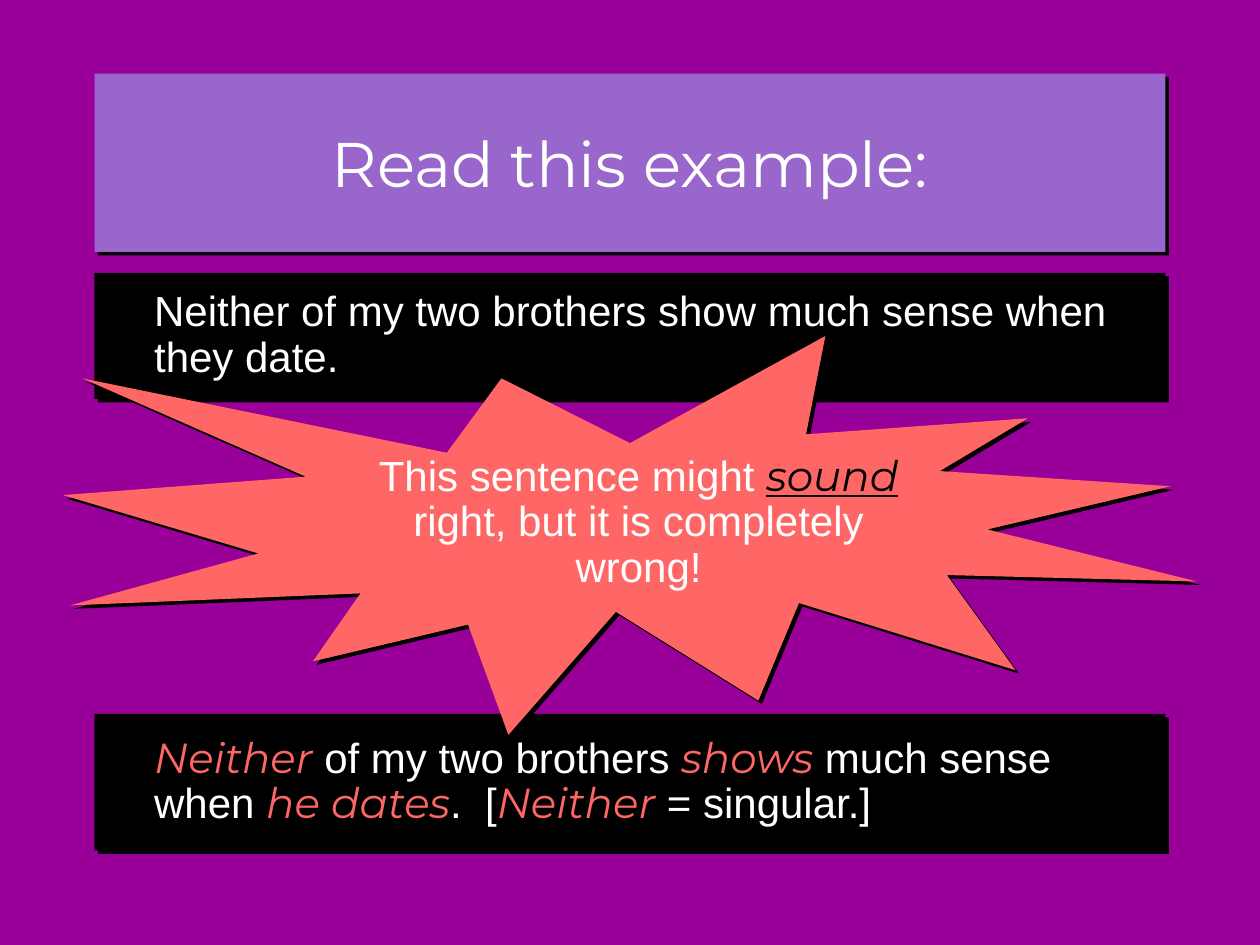
from lxml import etree
from pptx import Presentation
from pptx.dml.color import RGBColor
from pptx.enum import shapes, text
from pptx.oxml import ns
from pptx.util import Pt

COLORS = {
    "background": "990099",
    "title": "9966CC",
    "sentence": "000000",
    "accent": "FF6666",
    "light": "FFFFFF",
    "dark": "000000",
}
BODY = {"font": "Arial", "color": "light"}
KEYWORD = {"font": "Montserrat", "color": "accent", "italic": True}
STRESSED = {"font": "Montserrat", "color": "dark", "italic": True, "underline": True}


def rgb(name):
    return RGBColor.from_string(COLORS[name])


def add_run(paragraph, wording, *, font, color, size=24, italic=False, underline=False):
    run = paragraph.add_run()
    run.text = wording
    run.font.name = font
    run.font.size = Pt(size)
    run.font.italic = italic
    run.font.underline = underline
    run.font.color.rgb = rgb(color)


def style_panel(panel, color):
    """Give a panel a plain fill and a hard shadow to the lower right."""
    panel.fill.solid()
    panel.fill.fore_color.rgb = rgb(color)
    panel.line.fill.background()
    panel.shadow.inherit = False
    effects = panel._element.spPr.find(ns.qn("a:effectLst"))
    shadow = etree.SubElement(effects, ns.qn("a:outerShdw"), blurRad="0",
                              dist=str(Pt(2.8)), dir="2700000", algn="ctr", rotWithShape="0")
    etree.SubElement(shadow, ns.qn("a:srgbClr"), val=COLORS["dark"])


def add_panel(slide, box, preset, color, runs, align, indent, inset):
    panel = slide.shapes.add_shape(preset, *map(Pt, box))
    style_panel(panel, color)
    frame = panel.text_frame
    frame.word_wrap = True
    frame.vertical_anchor = text.MSO_ANCHOR.MIDDLE
    frame.margin_top = frame.margin_bottom = Pt(inset)
    paragraph = frame.paragraphs[0]
    paragraph.alignment = align
    paragraph.line_spacing = 0.9
    paragraph.space_before = Pt(4.8)
    properties = paragraph._p.get_or_add_pPr()
    properties.set("marL", str(Pt(indent)))
    properties.set("indent", "0")
    for wording, style in runs:
        add_run(paragraph, wording, **style)


def add_sentence(slide, box, runs):
    add_panel(slide, box, shapes.MSO_SHAPE.RECTANGLE, "sentence", runs,
              text.PP_ALIGN.LEFT, indent=27, inset=18)


def add_burst(slide, box, runs):
    add_panel(slide, box, shapes.MSO_SHAPE.EXPLOSION1, "accent", runs,
              text.PP_ALIGN.CENTER, indent=18, inset=3.6)


def set_title(slide, box, wording):
    title = slide.shapes.title
    title.left, title.top, title.width, title.height = map(Pt, box)
    style_panel(title, "title")
    frame = title.text_frame
    frame.auto_size = text.MSO_AUTO_SIZE.NONE
    frame.vertical_anchor = text.MSO_ANCHOR.MIDDLE
    frame.paragraphs[0].alignment = text.PP_ALIGN.CENTER
    add_run(frame.paragraphs[0], wording, font="Montserrat", color="light", size=36)


def main():
    deck = Presentation()
    deck.slide_width, deck.slide_height = Pt(720), Pt(540)
    slide = deck.slides.add_slide(deck.slide_layouts[5])
    slide.background.fill.solid()
    slide.background.fill.fore_color.rgb = rgb("background")

    left, width = 54, 612
    set_title(slide, (left, 42, width, 102), "Read this example:")
    add_sentence(slide, (left, 408, width, 78), [
        ("Neither", KEYWORD),
        (" of my two brothers ", BODY),
        ("shows", KEYWORD),
        (" much sense when ", BODY),
        ("he dates", KEYWORD),
        (".  [", BODY),
        ("Neither", KEYWORD),
        (" = singular.]", BODY),
    ])
    add_sentence(slide, (left, 156, width, 72), [
        ("Neither of my two brothers show much sense when they date.", BODY),
    ])
    add_burst(slide, (36, 192, 648, 228), [
        ("This sentence might ", BODY),
        ("sound", STRESSED),
        (" right, but it is completely wrong!", BODY),
    ])
    deck.save("out.pptx")


if __name__ == "__main__":
    main()
